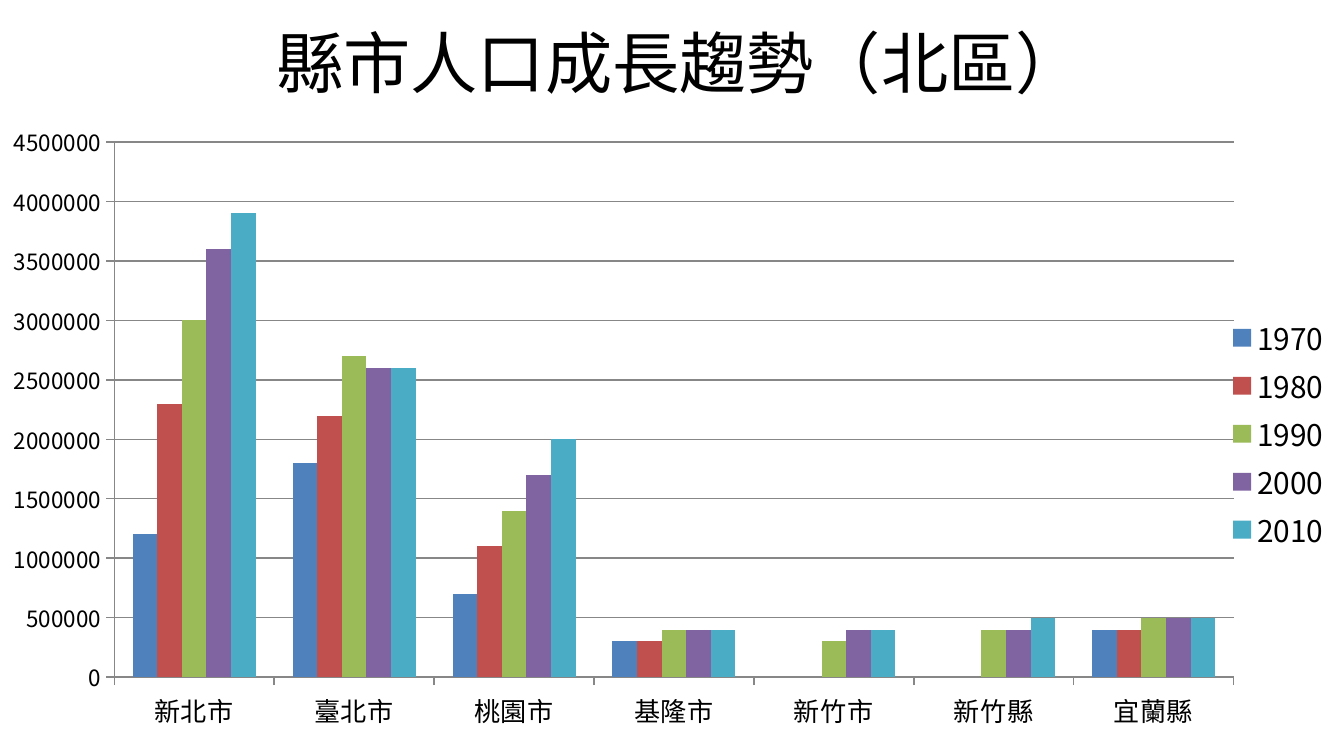
from dataclasses import dataclass

from lxml import etree
from pptx import Presentation
from pptx.chart.data import CategoryChartData
from pptx.dml.color import RGBColor
from pptx.enum.chart import XL_CHART_TYPE, XL_LEGEND_POSITION, XL_TICK_MARK
from pptx.enum.text import MSO_ANCHOR, MSO_AUTO_SIZE, PP_ALIGN
from pptx.oxml.ns import qn
from pptx.util import Cm, Pt

CLUSTERED = XL_CHART_TYPE.COLUMN_CLUSTERED
LEGEND_RIGHT = XL_LEGEND_POSITION.RIGHT
TICK_OUTSIDE = XL_TICK_MARK.OUTSIDE
MIDDLE = MSO_ANCHOR.MIDDLE
NO_AUTOFIT = MSO_AUTO_SIZE.NONE
CENTER = PP_ALIGN.CENTER

CJK_FONT = "Noto Sans CJK SC"
BLACK = "000000"
AXIS_GRAY = "878787"
TITLE_ONLY_LAYOUT = 5


@dataclass(frozen=True)
class CensusYear:
    year: str
    color: str
    populations: tuple[int | None, ...]


COUNTIES = ("新北市", "臺北市", "桃園市", "基隆市", "新竹市", "新竹縣", "宜蘭縣")
CENSUS_YEARS = (
    CensusYear("1970", "4F81BD", (1200000, 1800000, 700000, 300000, None, None, 400000)),
    CensusYear("1980", "C0504D", (2300000, 2200000, 1100000, 300000, None, None, 400000)),
    CensusYear("1990", "9BBB59", (3000000, 2700000, 1400000, 400000, 300000, 400000, 500000)),
    CensusYear("2000", "8064A2", (3600000, 2600000, 1700000, 400000, 400000, 400000, 500000)),
    CensusYear("2010", "4BACC6", (3900000, 2600000, 2000000, 400000, 400000, 500000, 500000)),
)
PLOT_AREA = {"x": 0.085, "y": 0.046, "w": 0.833, "h": 0.833}


def rgb(color: str) -> RGBColor:
    return RGBColor.from_string(color)


def style_font(font, size: float, name: str = CJK_FONT) -> None:
    font.name = name
    font.size = Pt(size)
    font.bold = False
    font.color.rgb = rgb(BLACK)


def add_east_asian_fonts(element) -> None:
    """Give every Latin font setting a matching East Asian one."""
    for latin in list(element.iter(qn("a:latin"))):
        east_asian = etree.Element(qn("a:ea"))
        east_asian.set("typeface", CJK_FONT)
        latin.addnext(east_asian)


def style_line(line) -> None:
    line.color.rgb = rgb(AXIS_GRAY)
    line.width = Pt(0.75)


def style_axis(axis, size: float) -> None:
    axis.major_tick_mark = TICK_OUTSIDE
    style_line(axis.format.line)
    style_font(axis.tick_labels.font, size)


def place_plot_area(chart) -> None:
    """Fix the inner plot area as fractions of the chart."""
    plot_area = chart.element.find(".//" + qn("c:plotArea"))
    for old_layout in plot_area.findall(qn("c:layout")):
        plot_area.remove(old_layout)
    layout = etree.Element(qn("c:layout"))
    manual = etree.SubElement(layout, qn("c:manualLayout"))
    settings = {"layoutTarget": "inner", "xMode": "edge", "yMode": "edge", **PLOT_AREA}
    for tag, value in settings.items():
        etree.SubElement(manual, qn(f"c:{tag}")).set("val", str(value))
    plot_area.insert(0, layout)


def add_title(slide) -> None:
    title = slide.shapes.title
    title.left, title.top, title.width, title.height = Cm(1.27), Cm(0.18), Cm(22.86), Cm(1.98)
    frame = title.text_frame
    frame.text = " 縣市人口成長趨勢（北區）"
    frame.auto_size = NO_AUTOFIT
    frame.vertical_anchor = MIDDLE
    heading = frame.paragraphs[0]
    heading.alignment = CENTER
    style_font(heading.runs[0].font, 36)
    add_east_asian_fonts(title.element)


def add_population_chart(slide) -> None:
    data = CategoryChartData()
    data.categories = COUNTIES
    for census in CENSUS_YEARS:
        data.add_series(census.year, census.populations)
    chart = slide.shapes.add_chart(CLUSTERED, Cm(0), Cm(2.13), Cm(25.4), Cm(12.14), data).chart
    chart.has_title = False
    style_font(chart.font, 18, "Calibri")

    columns = chart.plots[0]
    columns.gap_width = 150
    columns.overlap = 0
    columns.vary_by_categories = False
    for series, census in zip(columns.series, CENSUS_YEARS):
        series.format.fill.solid()
        series.format.fill.fore_color.rgb = rgb(census.color)

    style_axis(chart.category_axis, 14)
    population_axis = chart.value_axis
    style_axis(population_axis, 12)
    population_axis.minimum_scale = 0
    population_axis.maximum_scale = 4500000
    population_axis.major_unit = 500000
    population_axis.has_major_gridlines = True
    style_line(population_axis.major_gridlines.format.line)

    chart.has_legend = True
    chart.legend.position = LEGEND_RIGHT
    chart.legend.include_in_layout = False
    style_font(chart.legend.font, 16)
    place_plot_area(chart)
    add_east_asian_fonts(chart.element)


def main() -> None:
    presentation = Presentation()
    presentation.slide_width = Cm(25.4)
    presentation.slide_height = Cm(14.29)
    slide = presentation.slides.add_slide(presentation.slide_layouts[TITLE_ONLY_LAYOUT])
    add_title(slide)
    add_population_chart(slide)
    presentation.save("out.pptx")


if __name__ == "__main__":
    main()
